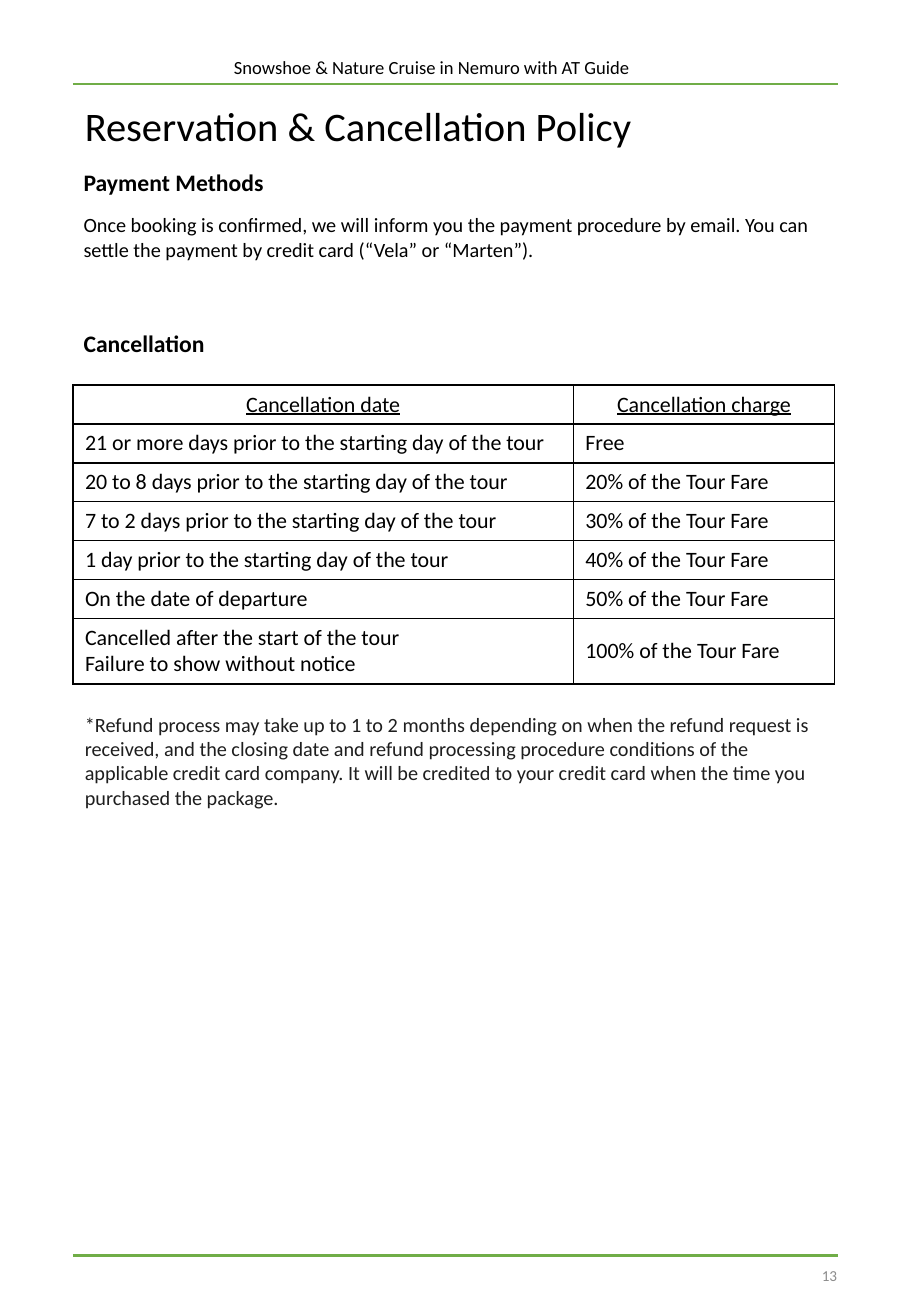
from lxml import etree
from pptx import Presentation
from pptx import util as u
from pptx.dml.color import RGBColor
from pptx.enum import shapes, text
from pptx.oxml.ns import qn

PX = u.Inches(1) // 100
FONT = "Calibri"
COLORS = {
    "ink": "000000",
    "note": "1E1E1E",
    "page_number": "8C8C8C",
    "rule": "70AD47",
    "paper": "FFFFFF",
}
CHARGES = [
    ("Cancellation date", "Cancellation charge"),
    ("21 or more days prior to the starting day of the tour", "Free"),
    ("20 to 8 days prior to the starting day of the tour", "20% of the Tour Fare"),
    ("7 to 2 days prior to the starting day of the tour", "30% of the Tour Fare"),
    ("1 day prior to the starting day of the tour", "40% of the Tour Fare"),
    ("On the date of departure", "50% of the Tour Fare"),
    ("Cancelled after the start of the tour\nFailure to show without notice",
     "100% of the Tour Fare"),
]
PAYMENT = (
    "Once booking is confirmed, we will inform you the payment procedure by email. "
    "You can settle the payment by credit card (“Vela” or “Marten”)."
)
REFUND = (
    "*Refund process may take up to 1 to 2 months depending on when the refund request "
    "is received, and the closing date and refund processing procedure conditions of the "
    "applicable credit card company. It will be credited to your credit card when the "
    "time you purchased the package."
)


def px(*lengths):
    """Turn px lengths into EMU."""
    return [u.Emu(length * PX) for length in lengths]


def rgb(name):
    """Return the named colour."""
    return RGBColor.from_string(COLORS[name])


def write(frame, content, size=12, color="ink", bold=False, underline=False,
          align=text.PP_ALIGN.LEFT):
    """Fill a text frame with one formatted paragraph per line of content."""
    frame.word_wrap = True
    frame.text = content
    for paragraph in frame.paragraphs:
        paragraph.alignment = align
        for run in paragraph.runs:
            font = run.font
            font.name, font.size = FONT, u.Pt(size)
            font.bold, font.underline = bold, underline
            font.color.rgb = rgb(color)


def add_text(slide, box, content, anchor=text.MSO_ANCHOR.TOP, **style):
    """Add a text box."""
    frame = slide.shapes.add_textbox(*px(*box)).text_frame
    write(frame, content, **style)
    frame.vertical_anchor = anchor


def add_heading(slide, left, top, content, **style):
    """Add a heading on a plain white bar."""
    shape = slide.shapes.add_shape(
        shapes.MSO_SHAPE.RECTANGLE, *px(left, top, 630, 35))
    shape.shadow.inherit = False
    shape.fill.solid()
    shape.fill.fore_color.rgb = rgb("paper")
    shape.line.fill.background()
    shape.text_frame.vertical_anchor = text.MSO_ANCHOR.MIDDLE
    write(shape.text_frame, content, **style)


def add_rule(slide, top):
    """Add a green rule between the page margins."""
    rule = slide.shapes.add_connector(
        shapes.MSO_CONNECTOR.STRAIGHT, *px(60, top, 690, top))
    rule.line.color.rgb = rgb("rule")
    rule.line.width = u.Pt(1.5)
    etree.SubElement(rule._element.spPr, qn("a:effectLst"))


def add_borders(cell):
    """Draw a thin line on all four sides of a cell."""
    properties = cell._tc.get_or_add_tcPr()
    for side in ("lnL", "lnR", "lnT", "lnB"):
        line = etree.SubElement(properties, qn(f"a:{side}"), w=str(u.Pt(1)))
        fill = etree.SubElement(line, qn("a:solidFill"))
        etree.SubElement(fill, qn("a:srgbClr"), val=COLORS["ink"])


def add_charge_table(slide, left, top, widths, heights):
    """Add the table of cancellation charges."""
    table = slide.shapes.add_table(
        len(heights), len(widths),
        *px(left, top, sum(widths), sum(heights))).table
    table.first_row = table.horz_banding = False
    for column, width in zip(table.columns, px(*widths)):
        column.width = width
    for row, height in zip(table.rows, px(*heights)):
        row.height = height
    for row_index, row in enumerate(CHARGES):
        header = row_index == 0
        align = text.PP_ALIGN.CENTER if header else text.PP_ALIGN.LEFT
        for column_index, content in enumerate(row):
            cell = table.cell(row_index, column_index)
            add_borders(cell)
            cell.fill.background()
            cell.vertical_anchor = text.MSO_ANCHOR.MIDDLE
            write(cell.text_frame, content, size=13, underline=header, align=align)


def main():
    """Build the reservation and cancellation page."""
    presentation = Presentation()
    presentation.slide_width, presentation.slide_height = px(750, 1083)
    slide = presentation.slides.add_slide(presentation.slide_layouts[6])

    add_rule(slide, 1033)
    add_text(slide, (530, 1021, 169, 58), "13", anchor=text.MSO_ANCHOR.MIDDLE,
             size=9, color="page_number", align=text.PP_ALIGN.RIGHT)
    add_rule(slide, 69)
    add_heading(slide, 60, 86, "Reservation & Cancellation Policy", size=24)
    add_heading(slide, 59, 265, "Cancellation", size=14, bold=True)
    add_heading(slide, 59, 132, "Payment Methods", size=14, bold=True)
    add_charge_table(slide, 60, 317, widths=[412, 215], heights=[32] * 6 + [54])
    add_text(slide, (60, 581, 631, 111), REFUND, color="note")
    add_text(slide, (59, 170, 630, 50), PAYMENT)
    add_text(slide, (21, 41, 669, 47),
             "Snowshoe & Nature Cruise in Nemuro with AT Guide",
             size=11, align=text.PP_ALIGN.CENTER)
    presentation.save("out.pptx")


if __name__ == "__main__":
    main()
